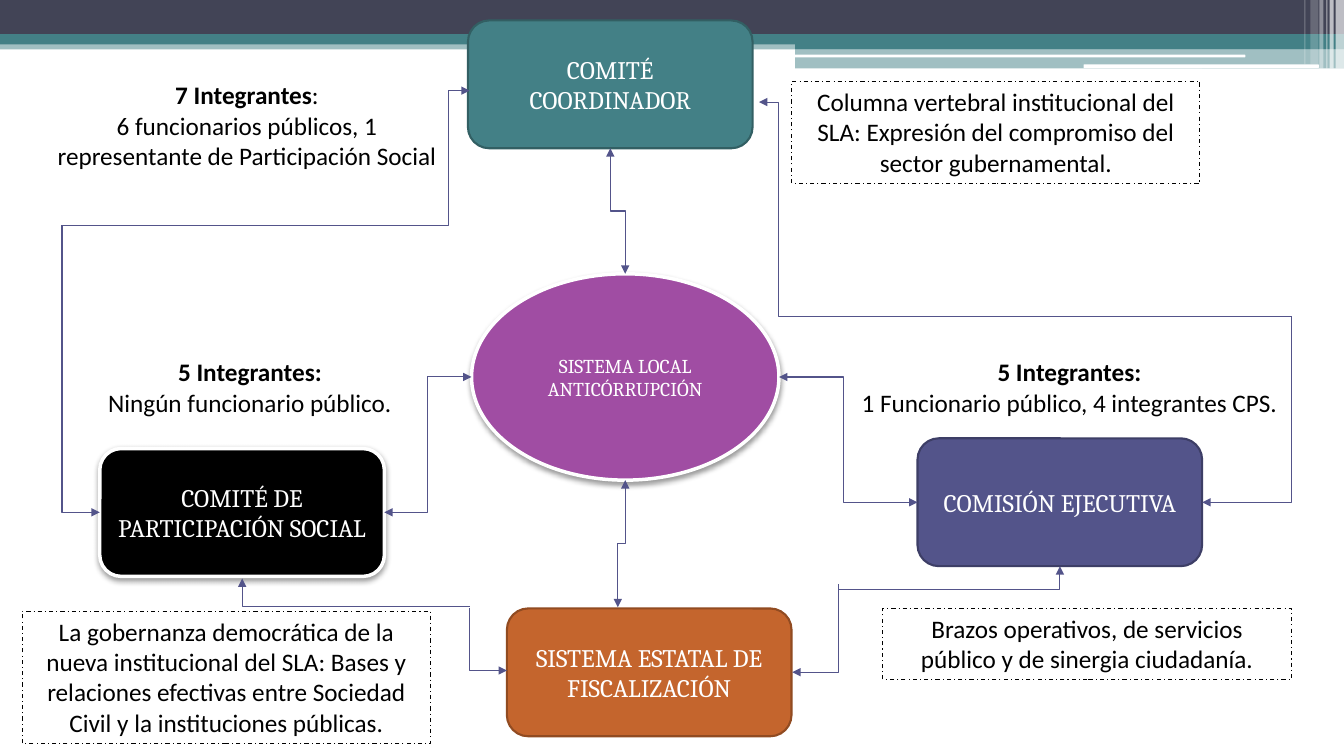
from lxml import etree
from pptx import Presentation
from pptx.dml.color import RGBColor
from pptx.enum.dml import MSO_LINE
from pptx.enum.shapes import MSO_CONNECTOR, MSO_SHAPE
from pptx.enum.text import MSO_ANCHOR, PP_ALIGN
from pptx.oxml.ns import qn
from pptx.util import Pt

RECT, ROUND, OVAL = MSO_SHAPE.RECTANGLE, MSO_SHAPE.ROUNDED_RECTANGLE, MSO_SHAPE.OVAL
ELBOW, DASH_DOT = MSO_CONNECTOR.ELBOW, MSO_LINE.DASH_DOT
TOP, MIDDLE, CENTER = MSO_ANCHOR.TOP, MSO_ANCHOR.MIDDLE, PP_ALIGN.CENTER

WHITE, BLACK = RGBColor(255, 255, 255), RGBColor(0, 0, 0)
SLATE, TEAL = RGBColor(0x42, 0x44, 0x56), RGBColor(0x43, 0x80, 0x86)
INDIGO, PURPLE = RGBColor(0x53, 0x54, 0x8A), RGBColor(0xA0, 0x4D, 0xA3)
ORANGE = RGBColor(0xC4, 0x65, 0x2D)
TEAL_EDGE, INDIGO_EDGE = RGBColor(0x32, 0x5F, 0x63), RGBColor(0x3D, 0x3E, 0x66)
ORANGE_EDGE = RGBColor(0x91, 0x4B, 0x21)

# left, top, width, height, shape, colour, opacity in percent
BANNER = [
    (0, 28.8, 960, 6.5, RECT, TEAL, 50),
    (0, 0, 960, 24.5, RECT, SLATE, 100),
    (0, 24.5, 960, 7.2, RECT, TEAL, 100),
    (568, 28, 392, 7, RECT, TEAL, 100),
    (568, 34.7, 392, 14.2, RECT, TEAL, 50),
    (567.5, 39, 322, 2, ROUND, WHITE, 100),
    (774, 46, 168, 2.6, ROUND, WHITE, 100),
    (954, 0, 6, 49, RECT, WHITE, 65),
    (949.7, 0, 2.9, 49, RECT, WHITE, 65),
    (947.5, 0, 0.7, 49, RECT, WHITE, 60),
    (942.5, 0, 2.9, 49, RECT, WHITE, 40),
    (936, 0, 5.8, 46, RECT, WHITE, 20),
    (931.7, 0, 0.7, 46, RECT, WHITE, 30),
]

# left, top, width, height, shape, fill, edge, edge width, raised, size, text
BODIES = [
    (334.3, 14.6, 203.3, 91.3, ROUND, TEAL, TEAL_EDGE, 1.5, False, 18,
     "COMITÉ\nCOORDINADOR"),
    (71.3, 320.4, 203.3, 91.3, ROUND, BLACK, WHITE, 2.5, True, 18,
     "COMITÉ DE\nPARTICIPACIÓN SOCIAL"),
    (655.4, 313.1, 203.3, 91.3, ROUND, INDIGO, INDIGO_EDGE, 1.5, False, 18,
     "COMISIÓN EJECUTIVA"),
    (362.1, 434.6, 203.3, 91.3, ROUND, ORANGE, ORANGE_EDGE, 1.5, False, 18,
     "SISTEMA ESTATAL DE FISCALIZACIÓN"),
    (336.8, 195.6, 219.6, 147.4, OVAL, PURPLE, WHITE, 2.5, True, 14,
     "SISTEMA LOCAL ANTICÓRRUPCIÓN"),
]

# left, top, width, height, heading, mark after it, text
MEMBERS = [
    (25.2, 53.3, 302.4, 72.7, "7 Integrantes", ":",
     "6 funcionarios públicos, 1\nrepresentante de Participación Social"),
    (10.8, 251.3, 335.5, 50.9, "5 Integrantes:", "", "Ningún funcionario público."),
    (588.2, 251.3, 351.4, 50.9, "5 Integrantes:", "",
     "1 Funcionario público, 4 integrantes CPS."),
]

ROLES = [
    (15.9, 436.6, 291.6, 94.5, "La gobernanza democrática de la nueva institucional del SLA: "
     "Bases y relaciones efectivas entre Sociedad Civil y la instituciones públicas."),
    (565.5, 58.2, 291.6, 72.7, "Columna vertebral institucional del SLA: "
     "Expresión del compromiso del sector gubernamental."),
    (630.7, 434.6, 291.6, 50.9,
     "Brazos operativos, de servicios público y de sinergia ciudadanía."),
]

# start x, start y, end x, end y, arrowheads, bend position
STEPS = [
    (274.5, 366, 336.8, 269.3, ("headEnd", "tailEnd"), 0.5),
    (556.5, 269.3, 655.4, 358.8, ("headEnd", "tailEnd"), 0.463),
    (44.3, 161, 335.5, 64.8, ("tailEnd",), 0.948),
    (922.3, 226, 542.2, 72.9, ("tailEnd",), 0.963),
]
UPRIGHT_STEPS = [
    (436, 105.9, 446.6, 195.6),
    (446.6, 343, 441.3, 433.8),
]
# Single corners: horizontal leg first
CORNERS = [
    (71.3, 366, 44.3, 161, "headEnd"),
    (858.8, 358.8, 922.3, 225.5, "headEnd"),
    (335.5, 433.3, 173, 413.2, "tailEnd"),
    (599, 421.2, 757.1, 404.5, "tailEnd"),
    (362.1, 479, 335.5, 434.6, "headEnd"),
    (566, 480.2, 599, 417.5, "headEnd"),
]


def add_text(p, text, font="Calibri", size=18, color=BLACK, bold=False):
    p.alignment = CENTER
    for i, line in enumerate(text.split("\n")):
        if i:
            p.add_line_break()
        r = p.add_run()
        r.text = line
        r.font.name, r.font.size, r.font.bold = font, Pt(size), bold
        r.font.color.rgb = color


def add_box(s, kind, box, fill=None, edge=None, width=0.75, opacity=100):
    sp = s.shapes.add_shape(kind, *map(Pt, box))
    sp.shadow.inherit = False
    if fill is None:
        sp.fill.background()
    else:
        sp.fill.solid()
        sp.fill.fore_color.rgb = fill
        if opacity < 100:
            color = sp._element.spPr.find(qn("a:solidFill"))[0]
            etree.SubElement(color, qn("a:alpha"), val=str(opacity * 1000))
    if edge is None:
        sp.line.fill.background()
    else:
        sp.line.color.rgb = edge
        sp.line.width = Pt(width)
    sp.text_frame.word_wrap = True
    return sp


def raise_shape(sp):
    """Give the shape a soft shadow below it."""
    effects = sp._element.spPr.find(qn("a:effectLst"))
    shadow = etree.SubElement(effects, qn("a:outerShdw"), blurRad=str(Pt(4.1)),
                              dist=str(Pt(2)), dir="5400000", rotWithShape="0")
    color = etree.SubElement(shadow, qn("a:srgbClr"), val=str(BLACK))
    etree.SubElement(color, qn("a:alpha"), val="40000")


def add_elbow(s, x1, y1, x2, y2, arrows, bend=0.5, corner=False, turned=False):
    """Draw a bent arrow; a turned one leaves its start vertically."""
    if turned:
        cx, cy, dx, dy = (x1 + x2) / 2, (y1 + y2) / 2, x2 - x1, y2 - y1
        x1, y1, x2, y2 = cx - dy / 2, cy + dx / 2, cx + dy / 2, cy - dx / 2
    c = s.shapes.add_connector(ELBOW, Pt(x1), Pt(y1), Pt(x2), Pt(y2))
    c.line.color.rgb = INDIGO
    c.line.width = Pt(0.75)
    spPr = c._element.spPr
    etree.SubElement(spPr, qn("a:effectLst"))
    if turned:
        spPr.find(qn("a:xfrm")).set("rot", "5400000")
    geometry = spPr.find(qn("a:prstGeom"))
    if corner:
        geometry.set("prst", "bentConnector2")
    else:
        guides = geometry.find(qn("a:avLst"))
        etree.SubElement(guides, qn("a:gd"), name="adj1", fmla=f"val {round(bend * 100000)}")
    for end in arrows:
        etree.SubElement(spPr.find(qn("a:ln")), qn("a:" + end), type="triangle")


def main():
    prs = Presentation()
    prs.slide_width, prs.slide_height = Pt(960), Pt(540)
    s = prs.slides.add_slide(prs.slide_layouts[6])

    for *box, kind, color, opacity in BANNER:
        add_box(s, kind, box, fill=color, opacity=opacity)

    for *box, kind, fill, edge, width, raised, size, text in BODIES:
        sp = add_box(s, kind, box, fill, edge, width)
        if raised:
            raise_shape(sp)
        sp.text_frame.vertical_anchor = MIDDLE
        add_text(sp.text_frame.paragraphs[0], text, font="Cambria", size=size, color=WHITE)

    for *box, heading, mark, text in MEMBERS:
        tf = s.shapes.add_textbox(*map(Pt, box)).text_frame
        tf.word_wrap = True
        add_text(tf.paragraphs[0], heading, bold=True)
        if mark:
            add_text(tf.paragraphs[0], mark)
        add_text(tf.add_paragraph(), text)

    for *box, text in ROLES:
        sp = add_box(s, RECT, box, edge=BLACK)
        sp.line.dash_style = DASH_DOT
        sp.text_frame.vertical_anchor = TOP
        add_text(sp.text_frame.paragraphs[0], text)

    for *points, arrows, bend in STEPS:
        add_elbow(s, *points, arrows, bend=bend)
    for points in UPRIGHT_STEPS:
        add_elbow(s, *points, ("headEnd", "tailEnd"), turned=True)
    for *points, arrow in CORNERS:
        add_elbow(s, *points, (arrow,), corner=True)

    prs.save("out.pptx")


if __name__ == "__main__":
    main()
